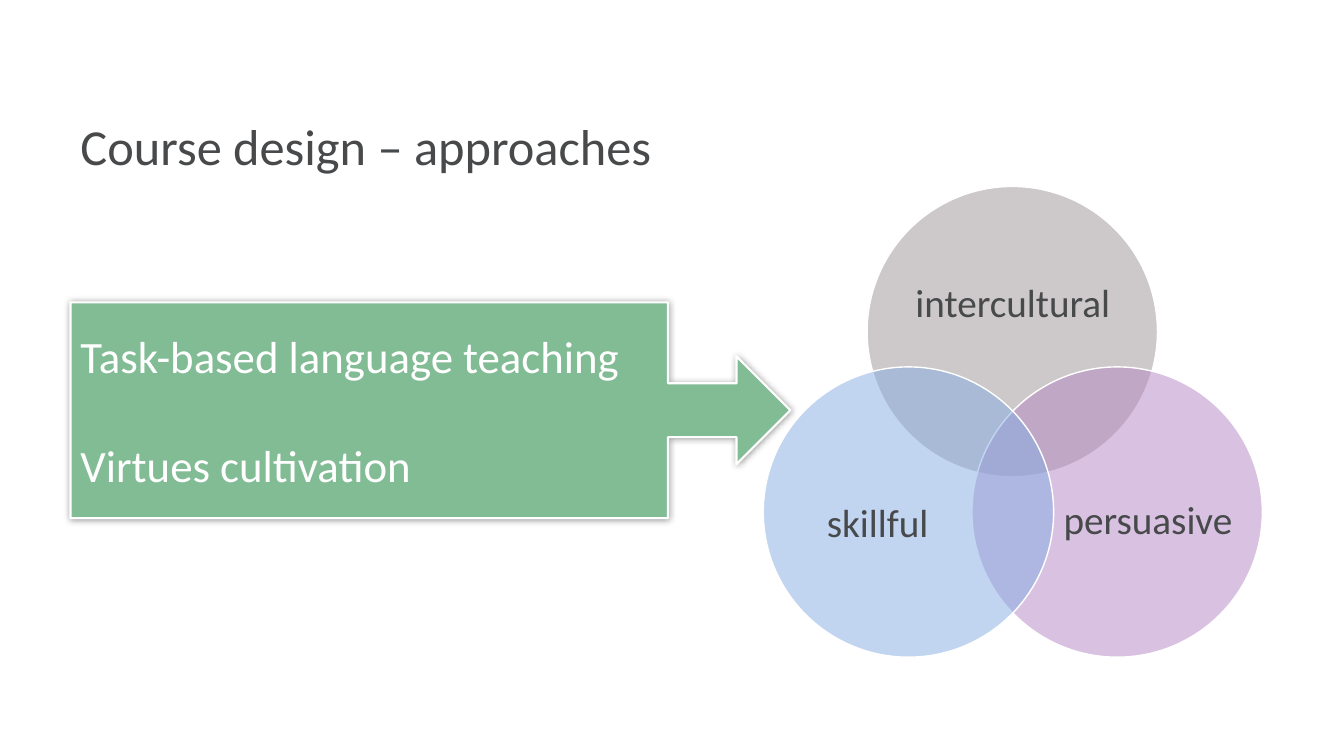
"""Build the course design slide with a callout and a three-circle diagram."""
from dataclasses import dataclass

from lxml.etree import SubElement
from pptx import Presentation
from pptx.dml.color import RGBColor
from pptx.enum.shapes import MSO_SHAPE as Preset
from pptx.enum.text import MSO_ANCHOR as Anchor, PP_ALIGN as Align
from pptx.oxml.ns import qn
from pptx.shapes.autoshape import Shape
from pptx.slide import Slide
from pptx.text.text import _Paragraph as Paragraph
from pptx.util import Inches, Pt

FONT = "Calibri"
INK = RGBColor(0x47, 0x49, 0x4B)
WHITE = RGBColor(0xFF, 0xFF, 0xFF)
GREEN = RGBColor(0x82, 0xBC, 0x95)
GREY = RGBColor(0x9D, 0x93, 0x94)
PURPLE = RGBColor(0xB4, 0x87, 0xC5)
BLUE = RGBColor(0x84, 0xAD, 0xE4)
DIAMETER = 2.88

Box = tuple[float, float, float, float]


@dataclass(frozen=True)
class Circle:
    label: str
    color: RGBColor
    left: float
    top: float
    label_box: Box
    line_spacing: float = 1.0


CIRCLES = [
    Circle("intercultural", GREY, 8.6, 1.85, (8.99, 2.35, 2.11, 1.29)),
    Circle("persuasive", PURPLE, 9.64, 3.64, (10.52, 4.39, 1.73, 1.58), 0.9),
    Circle("skillful", BLUE, 7.57, 3.64, (7.84, 4.39, 1.73, 1.58)),
]


def style_paragraph(paragraph: Paragraph, size: int, color: RGBColor, align: Align) -> None:
    paragraph.alignment = align
    paragraph.font.name = FONT
    paragraph.font.size = Pt(size)
    paragraph.font.color.rgb = color


def add_label(slide: Slide, box: Box, text: str, size: int, align: Align) -> Shape:
    label = slide.shapes.add_textbox(*map(Inches, box))
    frame = label.text_frame
    frame.word_wrap = True
    frame.vertical_anchor = Anchor.MIDDLE
    frame.text = text
    style_paragraph(frame.paragraphs[0], size, INK, align)
    return label


def add_filled_shape(slide: Slide, preset: Preset, box: Box, color: RGBColor, line: float) -> Shape:
    shape = slide.shapes.add_shape(preset, *map(Inches, box))
    shape.shadow.inherit = False
    shape.fill.solid()
    shape.fill.fore_color.rgb = color
    shape.line.color.rgb = WHITE
    shape.line.width = Pt(line)
    return shape


def add_circle(slide: Slide, circle: Circle) -> None:
    box = (circle.left, circle.top, DIAMETER, DIAMETER)
    shape = add_filled_shape(slide, Preset.OVAL, box, circle.color, 1)
    fill_color = shape.element.spPr.find(qn("a:solidFill"))[0]
    SubElement(fill_color, qn("a:alpha"), val="50000")
    label = add_label(slide, circle.label_box, circle.label, 28, Align.CENTER)
    frame = label.text_frame
    frame.margin_left = frame.margin_right = frame.margin_top = frame.margin_bottom = 0
    frame.paragraphs[0].line_spacing = circle.line_spacing


def add_soft_shadow(shape: Shape) -> None:
    effects = shape.element.spPr.find(qn("a:effectLst"))
    shadow = SubElement(effects, qn("a:outerShdw"), blurRad=str(Pt(5)), dist="0", dir="0")
    color = SubElement(shadow, qn("a:srgbClr"), val="000000")
    SubElement(color, qn("a:alpha"), val="40000")


def add_approaches(slide: Slide) -> None:
    box = (0.7, 3, 7.14, 2.14)
    callout = add_filled_shape(slide, Preset.RIGHT_ARROW_CALLOUT, box, GREEN, 1.5)
    for index, value in enumerate((0.25, 0.25, 0.25, 0.83)):
        callout.adjustments[index] = value
    add_soft_shadow(callout)
    frame = callout.text_frame
    frame.word_wrap = True
    frame.vertical_anchor = Anchor.MIDDLE
    frame.text = "Task-based language teaching\nVirtues cultivation"
    for paragraph in frame.paragraphs:
        style_paragraph(paragraph, 32, WHITE, Align.LEFT)
    frame.paragraphs[1].space_before = Pt(39)


def main() -> None:
    presentation = Presentation()
    presentation.slide_width = Inches(13.33)
    presentation.slide_height = Inches(7.5)
    slide = presentation.slides.add_slide(presentation.slide_layouts[6])
    add_label(slide, (0.7, 1.09, 12, 0.7), "Course design – approaches", 36, Align.LEFT)
    for circle in CIRCLES:
        add_circle(slide, circle)
    add_approaches(slide)
    presentation.save("out.pptx")


if __name__ == "__main__":
    main()
